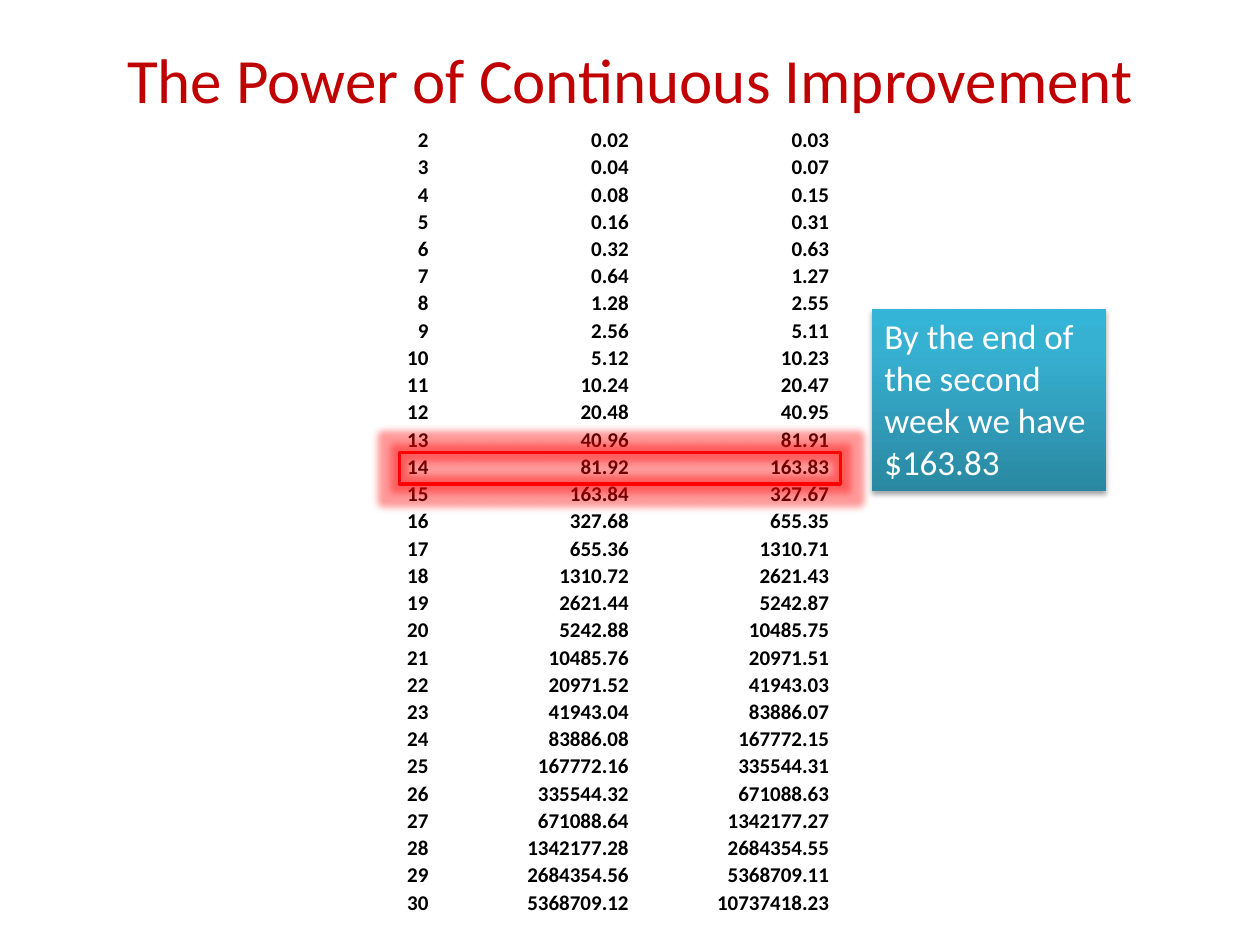
import copy
import dataclasses

import lxml.etree
import pptx
import pptx.dml.color
import pptx.enum.shapes
import pptx.enum.text
import pptx.oxml.ns
import pptx.util

Inches = pptx.util.Inches
COLORS = {
    "title": "C00000",
    "table": "000000",
    "callout": "FFFFFF",
    "highlight": "FF0000",
    "shadow": "000000",
}
CALLOUT_GRADIENT = [(0, "2A88A2"), (0.8, "37B1D2"), (1, "34B4D6")]
FONT = "Calibri"
NO_STYLE = "{2D5ABB26-0587-4C30-8999-92F81FD0307C}"
COLUMN_WIDTHS = [1.16, 1.59, 1.59]
TABLE_HEIGHT = 6.27


@dataclasses.dataclass
class Box:
    left: float
    top: float
    width: float
    height: float

    def lengths(self) -> list:
        return [Inches(value) for value in dataclasses.astuple(self)]


@dataclasses.dataclass
class DayRow:
    day: int

    def texts(self) -> list[str]:
        earned = 2 ** (self.day - 1)
        total = 2 ** self.day - 1
        return [str(self.day), f"{earned / 100:.2f}", f"{total / 100:.2f}"]


def rgb(name: str) -> pptx.dml.color.RGBColor:
    return pptx.dml.color.RGBColor.from_string(COLORS.get(name, name))


def add_run(paragraph, text: str, size: float, color: str, bold: bool = False) -> None:
    run = paragraph.add_run()
    run.text = text
    run.font.name = FONT
    run.font.size = pptx.util.Pt(size)
    run.font.bold = bold
    run.font.color.rgb = rgb(color)


def add_effect(shape, tag: str, color: str, opacity: int, **attributes: str) -> None:
    shape.shadow.inherit = False
    qn = pptx.oxml.ns.qn
    effects = shape._element.spPr.find(qn("a:effectLst"))
    effect = lxml.etree.SubElement(effects, qn(tag), attributes)
    shade = lxml.etree.SubElement(effect, qn("a:srgbClr"), val=COLORS[color])
    lxml.etree.SubElement(shade, qn("a:alpha"), val=str(opacity * 1000))


def add_rectangle(slide, box: Box):
    return slide.shapes.add_shape(
        pptx.enum.shapes.MSO_SHAPE.RECTANGLE, *box.lengths())


def set_title(slide, text: str) -> None:
    title = slide.shapes.title
    title.left, title.top, title.width, title.height = Box(0, 0, 10, 1.25).lengths()
    title.text_frame.vertical_anchor = pptx.enum.text.MSO_ANCHOR.MIDDLE
    paragraph = title.text_frame.paragraphs[0]
    paragraph.alignment = pptx.enum.text.PP_ALIGN.CENTER
    add_run(paragraph, text, 36, "title")


def fill_cell(cell, text: str) -> None:
    cell.fill.background()
    cell.margin_left = cell.margin_right = cell.margin_top = Inches(0.01)
    cell.margin_bottom = 0
    cell.vertical_anchor = pptx.enum.text.MSO_ANCHOR.BOTTOM
    paragraph = cell.text_frame.paragraphs[0]
    paragraph.alignment = pptx.enum.text.PP_ALIGN.RIGHT
    add_run(paragraph, text, 12, "table", bold=True)


def add_savings_table(slide, days: list[DayRow]) -> None:
    box = Box(2.25, 1, sum(COLUMN_WIDTHS), TABLE_HEIGHT)
    frame = slide.shapes.add_table(len(days), len(COLUMN_WIDTHS), *box.lengths())
    table = frame.table
    table.first_row = table.horz_banding = False
    style = table._tbl.tblPr.find(pptx.oxml.ns.qn("a:tableStyleId"))
    style.text = NO_STYLE
    for column, width in zip(table.columns, COLUMN_WIDTHS):
        column.width = Inches(width)
    for row, day in zip(table.rows, days):
        row.height = Inches(TABLE_HEIGHT / len(days))
        for cell, text in zip(row.cells, day.texts()):
            fill_cell(cell, text)


def add_callout(slide, text: str) -> None:
    callout = add_rectangle(slide, Box(6.92, 2.45, 1.86, 1.45))
    callout.fill.gradient()
    callout.fill.gradient_angle = 90
    stop_list = callout._element.spPr.find(".//" + pptx.oxml.ns.qn("a:gsLst"))
    stop_list.append(copy.deepcopy(stop_list[0]))
    for stop, (position, color) in zip(callout.fill.gradient_stops, CALLOUT_GRADIENT):
        stop.position = position
        stop.color.rgb = rgb(color)
    callout.line.fill.background()
    add_effect(callout, "a:outerShdw", "shadow", 35, blurRad="40000",
               dist="23000", dir="5400000", rotWithShape="0")
    frame = callout.text_frame
    frame.word_wrap = True
    frame.auto_size = pptx.enum.text.MSO_AUTO_SIZE.SHAPE_TO_FIT_TEXT
    frame.vertical_anchor = pptx.enum.text.MSO_ANCHOR.TOP
    paragraph = frame.paragraphs[0]
    paragraph.alignment = pptx.enum.text.PP_ALIGN.LEFT
    add_run(paragraph, text, 20, "callout")


def add_highlight(slide) -> None:
    highlight = add_rectangle(slide, Box(3.17, 3.59, 3.5, 0.25))
    highlight.fill.background()
    highlight.line.color.rgb = rgb("highlight")
    highlight.line.width = pptx.util.Pt(2)
    add_effect(highlight, "a:glow", "highlight", 40, rad="101600")


def main() -> None:
    presentation = pptx.Presentation()
    presentation.slide_width = Inches(10)
    presentation.slide_height = Inches(7.5)
    slide = presentation.slides.add_slide(presentation.slide_layouts[5])
    set_title(slide, "The Power of Continuous Improvement")
    add_savings_table(slide, [DayRow(day) for day in range(2, 31)])
    add_callout(slide, "By the end of the second week we have $163.83")
    add_highlight(slide)
    presentation.save("out.pptx")


if __name__ == "__main__":
    main()
